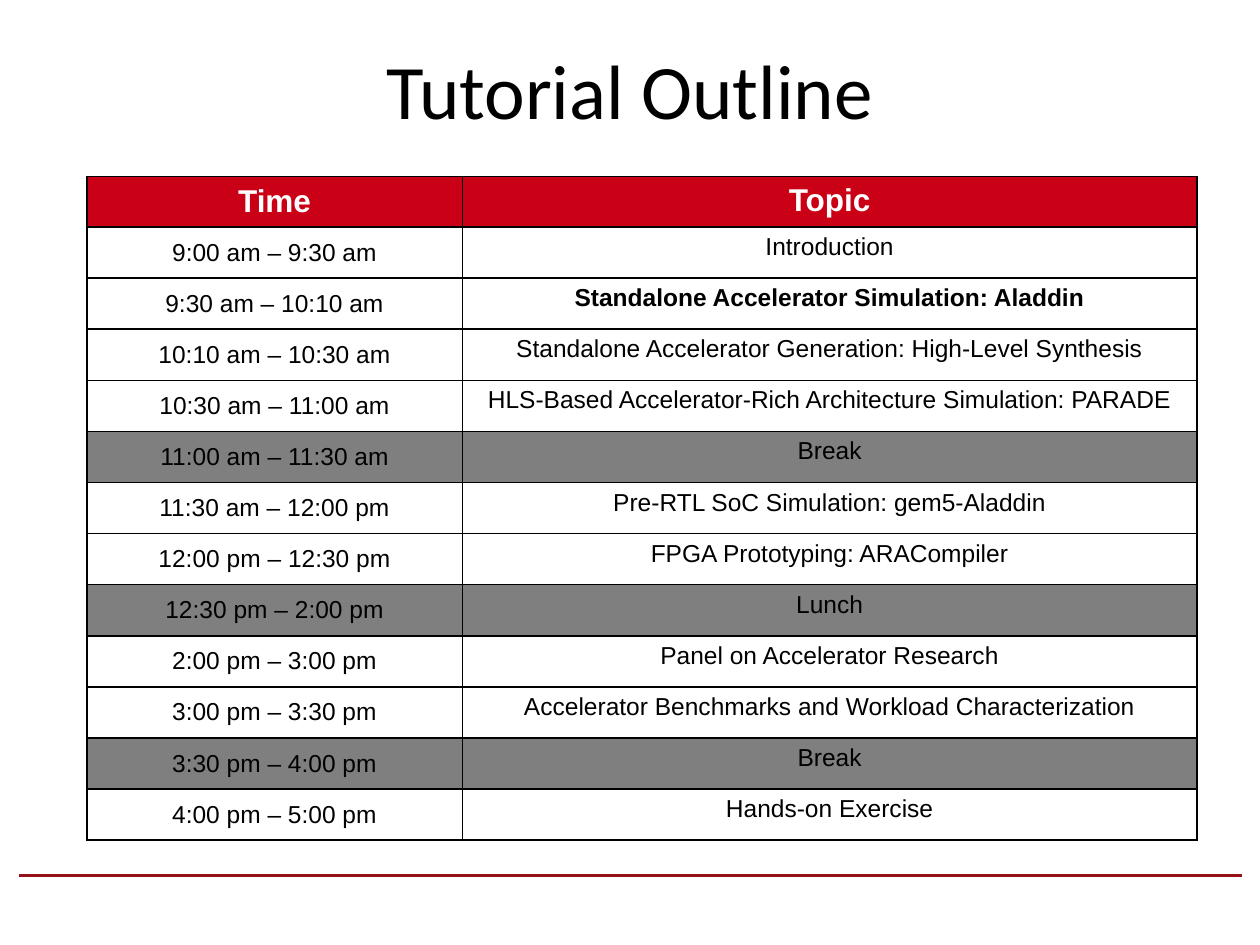
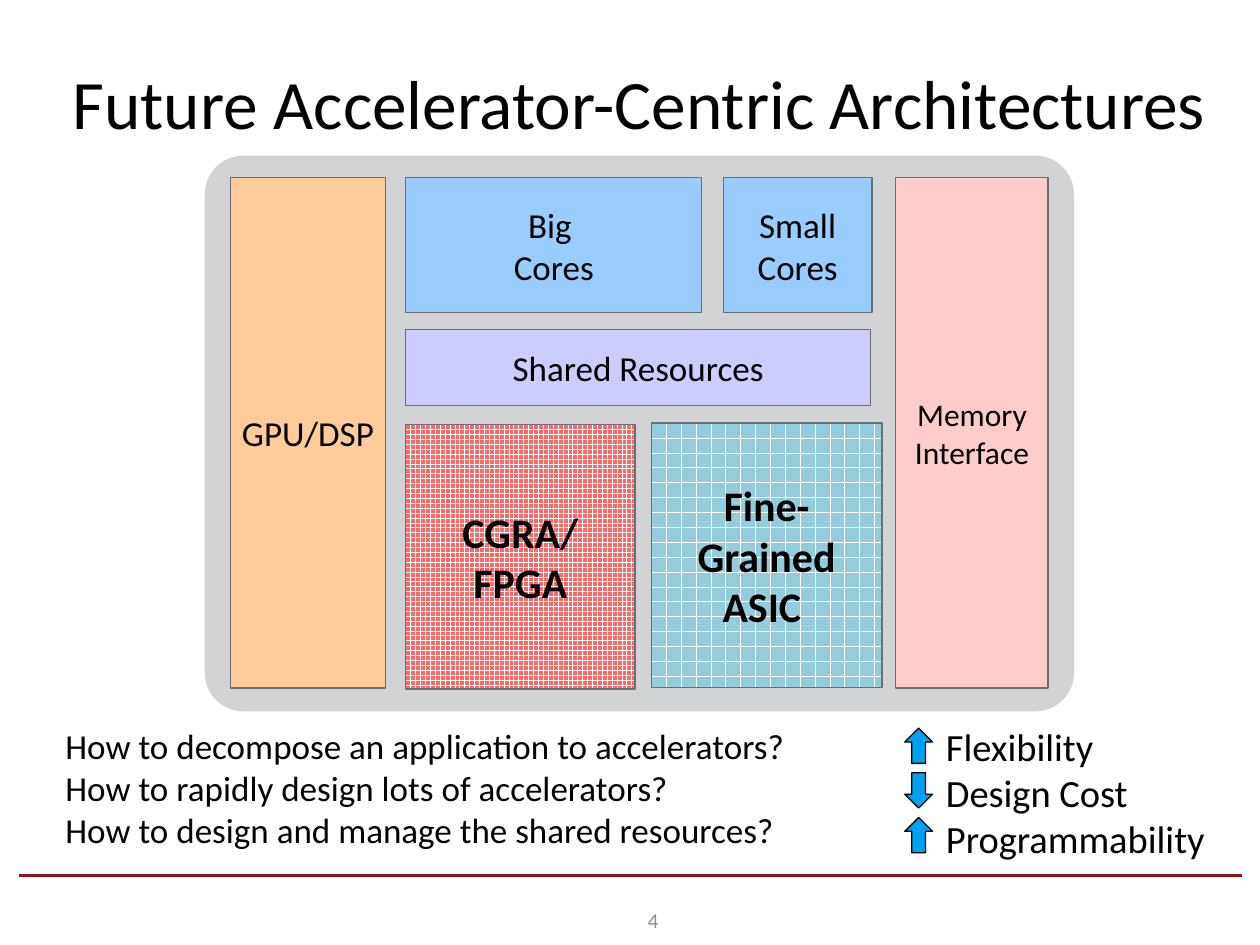
from dataclasses import dataclass

from lxml.etree import SubElement
from pptx import Presentation
from pptx.dml.color import RGBColor
from pptx.enum.dml import MSO_PATTERN_TYPE as Pattern
from pptx.enum.shapes import MSO_CONNECTOR, MSO_SHAPE as Shape
from pptx.enum.text import MSO_ANCHOR as Anchor, PP_ALIGN as Align
from pptx.oxml import parse_xml
from pptx.oxml.ns import nsdecls, qn
from pptx.util import Cm, Pt


@dataclass(frozen=True)
class Theme:
    heading_font: str = "Calibri"
    table_font: str = "Arial"
    black: str = "000000"
    white: str = "FFFFFF"
    rule: str = "971217"
    header: str = "C90016"
    pause: str = "7F7F7F"
    page: str = "8C8C8C"
    arrow: str = "00A1F1"
    chip: str = "D1D3D4"
    edge: str = "6D6E71"
    orange: str = "FFCC99"
    blue: str = "99CCFF"
    violet: str = "CCCCFF"
    pink: str = "FFCCCC"
    red: str = "FF6666"
    teal: str = "93CDDD"
    title_size: float = 44
    long_title_size: float = 39.6
    accent_size: float = 24
    effect_size: float = 22
    body_size: float = 20
    small_size: float = 18
    row_size: float = 14
    page_size: float = 12


theme = Theme()
rgb = RGBColor.from_string


def write(frame, lines, size, font=theme.heading_font, color=theme.black,
          bold=False, align=Align.CENTER):
    frame.word_wrap = True
    for index, line in enumerate(lines):
        paragraph = frame.add_paragraph() if index else frame.paragraphs[0]
        paragraph.alignment = align
        run = paragraph.add_run()
        run.text = line
        run.font.name = font
        run.font.size = Pt(size)
        run.font.bold = bold
        run.font.color.rgb = rgb(color)


def draw(shapes, kind, box, fill, edge):
    shape = shapes.add_shape(kind, *map(Cm, box))
    shape.shadow.inherit = False
    shape.fill.solid()
    shape.fill.fore_color.rgb = rgb(fill)
    shape.line.color.rgb = rgb(edge)
    shape.line.width = Pt(0.75)
    return shape


deck = Presentation()
deck.slide_width, deck.slide_height = Cm(25.4), Cm(19.05)
slides = []
for title, size, box in [
    ("Tutorial Outline", theme.title_size, (1.27, 0.2, 22.86, 3.18)),
    ("Future Accelerator-Centric Architectures", theme.long_title_size, (0.71, 0.46, 24.36, 3.18)),
]:
    slide = deck.slides.add_slide(deck.slide_layouts[6])
    slides.append(slide)
    rule = slide.shapes.add_connector(MSO_CONNECTOR.STRAIGHT, Cm(0.38), Cm(17.65), Cm(25.04), Cm(17.65))
    rule.line.color.rgb = rgb(theme.rule)
    rule.line.width = Pt(2)
    SubElement(rule.element.spPr, qn("a:effectLst"))
    heading = slide.shapes.add_textbox(*map(Cm, box)).text_frame
    heading.vertical_anchor = Anchor.MIDDLE
    write(heading, [title], size)

outline, architecture = slides

schedule = [
    ("Time", "Topic"),
    ("9:00 am – 9:30 am", "Introduction"),
    ("9:30 am – 10:10 am", "Standalone Accelerator Simulation: Aladdin"),
    ("10:10 am – 10:30 am", "Standalone Accelerator Generation: High-Level Synthesis"),
    ("10:30 am – 11:00 am", "HLS-Based Accelerator-Rich Architecture Simulation: PARADE"),
    ("11:00 am – 11:30 am", "Break"),
    ("11:30 am – 12:00 pm", "Pre-RTL SoC Simulation: gem5-Aladdin"),
    ("12:00 pm – 12:30 pm", "FPGA Prototyping: ARACompiler"),
    ("12:30 pm – 2:00 pm", "Lunch"),
    ("2:00 pm – 3:00 pm", "Panel on Accelerator Research"),
    ("3:00 pm – 3:30 pm", "Accelerator Benchmarks and Workload Characterization"),
    ("3:30 pm – 4:00 pm", "Break"),
    ("4:00 pm – 5:00 pm", "Hands-on Exercise"),
]
header_height, row_height = 0.95, 1.03
time_width, topic_width = 7.57, 14.81
agenda = outline.shapes.add_table(
    len(schedule), 2, Cm(1.75), Cm(3.56), Cm(time_width + topic_width),
    Cm(header_height + row_height * (len(schedule) - 1))).table
agenda.horz_banding = False
agenda.columns[0].width = Cm(time_width)
agenda.columns[1].width = Cm(topic_width)

for row, entry in enumerate(schedule):
    is_header = row == 0
    agenda.rows[row].height = Cm(header_height if is_header else row_height)
    for column, text in enumerate(entry):
        cell = agenda.cell(row, column)
        properties = cell._tc.get_or_add_tcPr()
        for side in ("lnL", "lnR", "lnT", "lnB"):
            properties.append(parse_xml(
                f'<a:{side} {nsdecls("a")} w="12700"><a:solidFill>'
                f'<a:srgbClr val="{theme.black}"/></a:solidFill></a:{side}>'))
        if is_header or entry[1] in ("Break", "Lunch"):
            cell.fill.solid()
            cell.fill.fore_color.rgb = rgb(theme.header if is_header else theme.pause)
        else:
            cell.fill.background()
        cell.vertical_anchor = Anchor.MIDDLE if column == 0 else Anchor.TOP
        write(cell.text_frame, [text],
              theme.small_size if is_header else theme.row_size,
              theme.table_font,
              theme.white if is_header else theme.black,
              is_header or text.endswith("Simulation: Aladdin"))

chip = architecture.shapes.add_group_shape().shapes
die = draw(chip, Shape.ROUNDED_RECTANGLE, (4.14, 3.15, 17.5, 11.18), theme.chip, theme.chip)
die.adjustments[0] = 0.069

top, left = 3.58, 8.18
core_height, column_height, fabric_height = 2.72, 10.29, 5.33
blocks = [
    (["GPU/DSP"], (4.65, top, 3.12, column_height), theme.orange, theme.body_size, True, None),
    (["Big ", "Cores"], (left, top, 5.97, core_height), theme.blue, theme.body_size, False, None),
    (["Shared Resources"], (left, 6.65, 9.37, 1.52), theme.violet, theme.body_size, False, None),
    (["Memory", "Interface"], (18.06, top, 3.07, column_height), theme.pink, theme.small_size, True, None),
    (["CGRA/", "FPGA"], (left, 8.56, 4.62, fabric_height), theme.red, theme.accent_size, True,
     Pattern.LARGE_GRID),
    (["Small Cores"], (14.58, top, 3, core_height), theme.blue, theme.body_size, False, None),
    (["Fine-", "Grained", "ASIC "], (13.13, 8.53, 4.65, fabric_height), theme.teal, theme.accent_size, True,
     Pattern.HORIZONTAL_BRICK),
]
for lines, box, fill, size, tight, pattern in blocks:
    block = draw(chip, Shape.RECTANGLE, box, fill, theme.edge)
    if pattern:
        block.fill.patterned()
        block.fill.pattern = pattern
        block.fill.fore_color.rgb = rgb(theme.white)
        block.fill.back_color.rgb = rgb(fill)
    label = block.text_frame
    label.vertical_anchor = Anchor.MIDDLE
    if tight:
        label.margin_left = label.margin_right = label.margin_top = label.margin_bottom = 0
    write(label, lines, size, bold=pattern is not None)

questions = architecture.shapes.add_textbox(Cm(1.07), Cm(14.48), Cm(17.3), Cm(2.82)).text_frame
write(questions, [
    "How to decompose an application to accelerators?",
    "How to rapidly design lots of accelerators?",
    "How to design and manage the shared resources?",
], theme.body_size, align=Align.LEFT)

effects = [
    ("Flexibility", Shape.UP_ARROW),
    ("Design Cost", Shape.DOWN_ARROW),
    ("Programmability", Shape.UP_ARROW),
]
effect_list = architecture.shapes.add_textbox(Cm(18.82), Cm(14.45), Cm(6.25), Cm(3.07)).text_frame
write(effect_list, [name for name, _ in effects], theme.effect_size, align=Align.LEFT)
for index, (_, direction) in enumerate(effects):
    draw(architecture.shapes, direction, (18.24, 14.68 + 0.9 * index, 0.56, 0.71),
         theme.arrow, theme.black)

page_number = architecture.shapes.add_textbox(Cm(10.21), Cm(18.03), Cm(5.92), Cm(1.02)).text_frame
page_number.vertical_anchor = Anchor.MIDDLE
write(page_number, ["4"], theme.page_size, color=theme.page)

deck.save("out.pptx")
